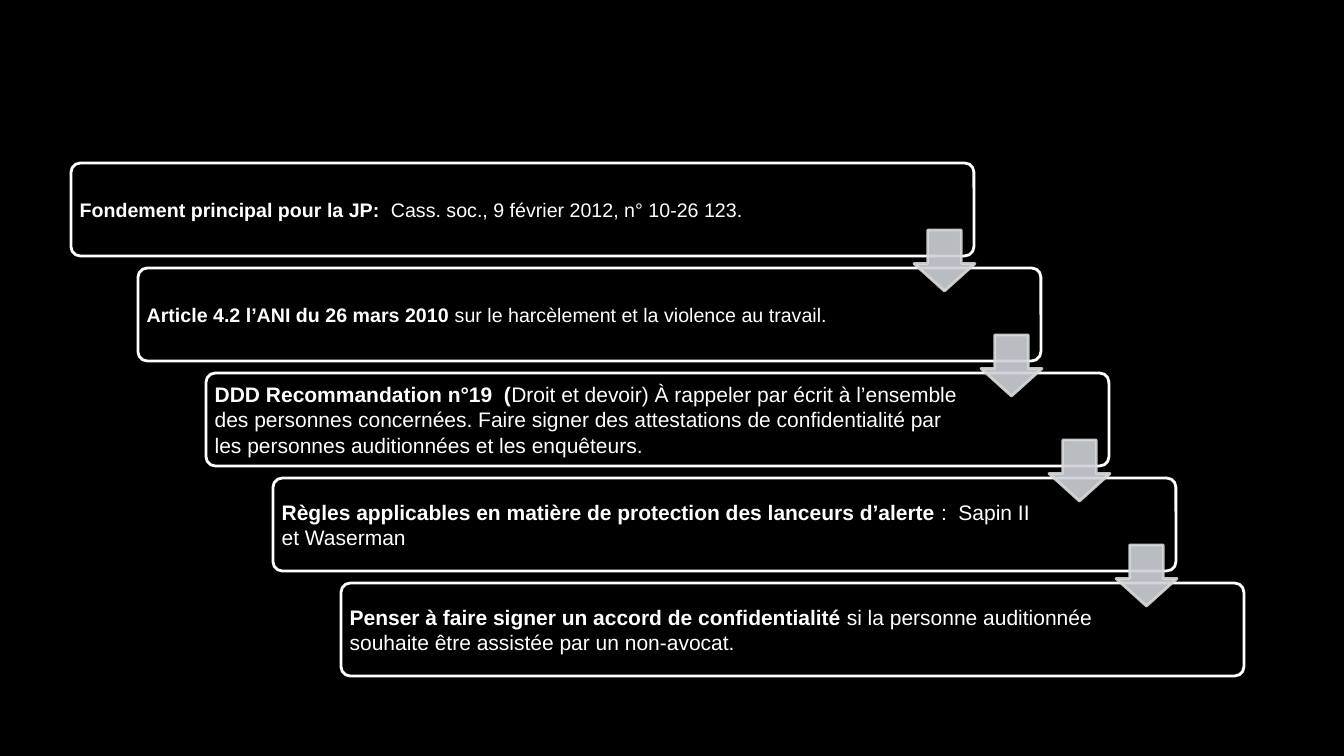
import pptx
import pptx.util
from pptx.dml.color import RGBColor
from pptx.enum.shapes import MSO_SHAPE
from pptx.enum.text import MSO_ANCHOR, PP_ALIGN
from pptx.oxml.ns import qn
from lxml import etree

PX = 914400 / 100.8
BLACK = RGBColor(0x00, 0x00, 0x00)
WHITE = RGBColor(0xFF, 0xFF, 0xFF)
STEEL = RGBColor(0xCC, 0xD2, 0xD8)
SILVER = RGBColor(0xD9, 0xD9, 0xD9)
DOWN = 105  # vertical step between boxes
BOX_W, BOX_H, ARROW = 903, 93, 61

STEPS = [
    (14, "Fondement principal pour la JP:  ",
     "Cass. soc., 9 février 2012, n° 10‑26 123."),
    (14, "Article 4.2 l’ANI du 26 mars 2010 ",
     "sur le harcèlement et la violence au travail."),
    (15, "DDD Recommandation n°19  (",
     "Droit et devoir) À rappeler par écrit à l’ensemble des personnes "
     "concernées. Faire signer des attestations de confidentialité par "
     "les personnes auditionnées et les enquêteurs."),
    (15, "Règles applicables en matière de protection des lanceurs d’alerte ",
     ":  Sapin II et Waserman"),
    (15, "Penser à faire signer un accord de confidentialité ",
     "si la personne auditionnée souhaite être assistée par un non-avocat."),
]


def px(n):
    return round(n * PX)


def draw(kind, rect, adjust, fill, edge):
    """Add a filled, outlined shape without shadow; rect is in px."""
    shape = slide.shapes.add_shape(kind, *map(px, rect))
    shape.shadow.inherit = False
    for i, value in enumerate(adjust):
        shape.adjustments[i] = value
    shape.fill.solid()
    shape.fill.fore_color.rgb = fill
    shape.line.color.rgb = edge
    shape.line.width = pptx.util.Pt(2)
    return shape


deck = pptx.Presentation()
deck.slide_width, deck.slide_height = px(1344), px(756)
slide = deck.slides.add_slide(deck.slide_layouts[6])
slide.background.fill.solid()
slide.background.fill.fore_color.rgb = BLACK

# Staircase of boxes, each half a pixel-pair further right
lefts = [71 + 135 * i // 2 for i in range(len(STEPS))]
frame_style = {
    "word_wrap": True, "vertical_anchor": MSO_ANCHOR.MIDDLE,
    "margin_left": px(6), "margin_right": px(134),
    "margin_top": px(3), "margin_bottom": px(3),
}
for i, (size, lead, rest) in enumerate(STEPS):
    box = draw(MSO_SHAPE.ROUNDED_RECTANGLE,
               (lefts[i], 163 + DOWN * i, BOX_W, BOX_H), [0.1], BLACK, WHITE)
    for key, value in frame_style.items():
        setattr(box.text_frame, key, value)
    para = box.text_frame.paragraphs[0]
    para.alignment = PP_ALIGN.LEFT
    for text, bold in ((lead, True), (rest, False)):
        run = para.add_run()
        run.text = text
        style = {"name": "Arial", "size": pptx.util.Pt(size), "bold": bold}
        for key, value in style.items():
            setattr(run.font, key, value)
        run.font.color.rgb = WHITE

# Arrows end flush with the right side of the box they leave
for i, left in enumerate(lefts[:-1]):
    arrow = draw(MSO_SHAPE.DOWN_ARROW,
                 (left + BOX_W - ARROW + 1, 230 + DOWN * i, ARROW, ARROW),
                 [0.55, 0.45], STEEL, SILVER)
    for color in arrow.element.spPr.iter(qn("a:srgbClr")):
        etree.SubElement(color, qn("a:alpha")).set("val", "90000")

deck.save("out.pptx")
